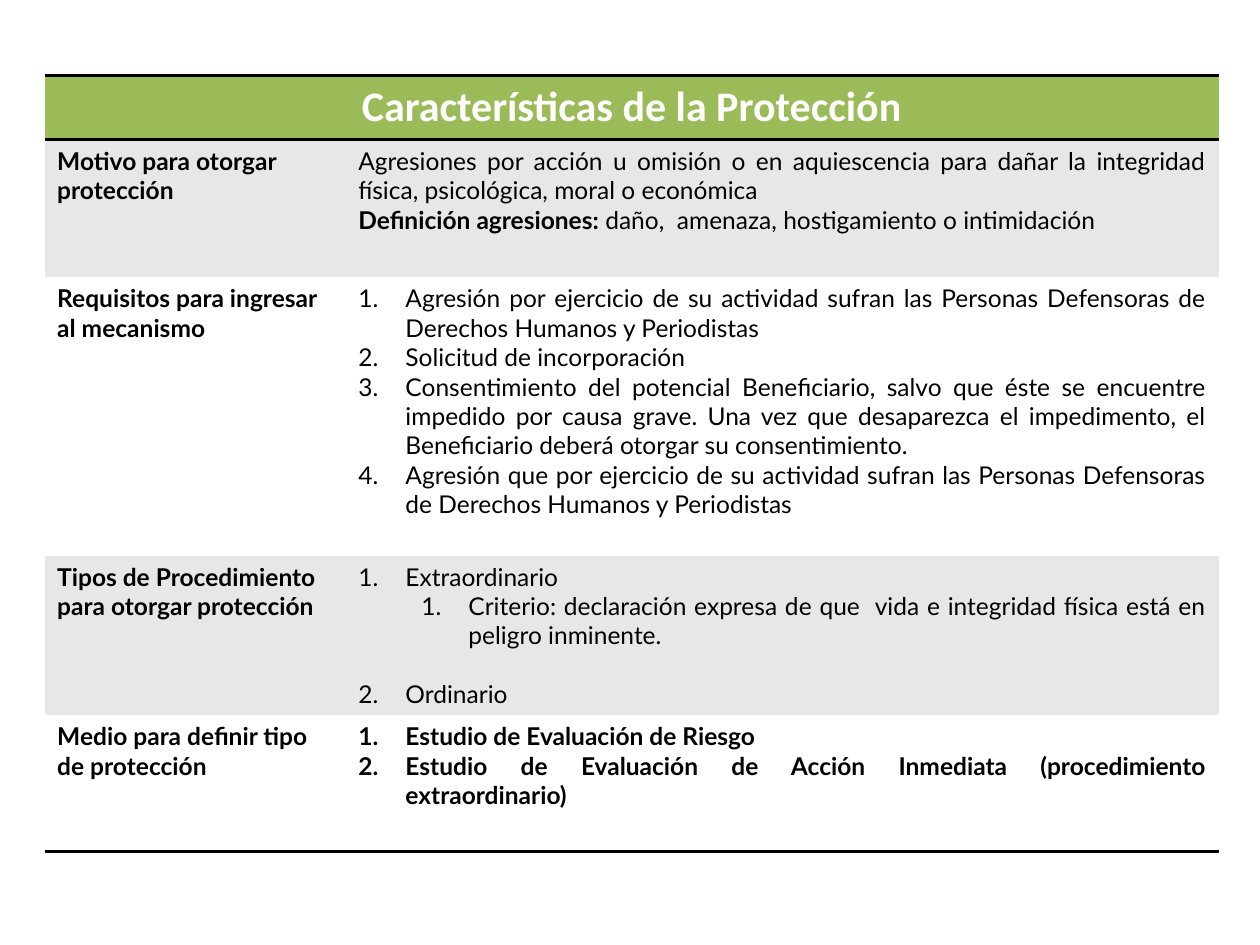
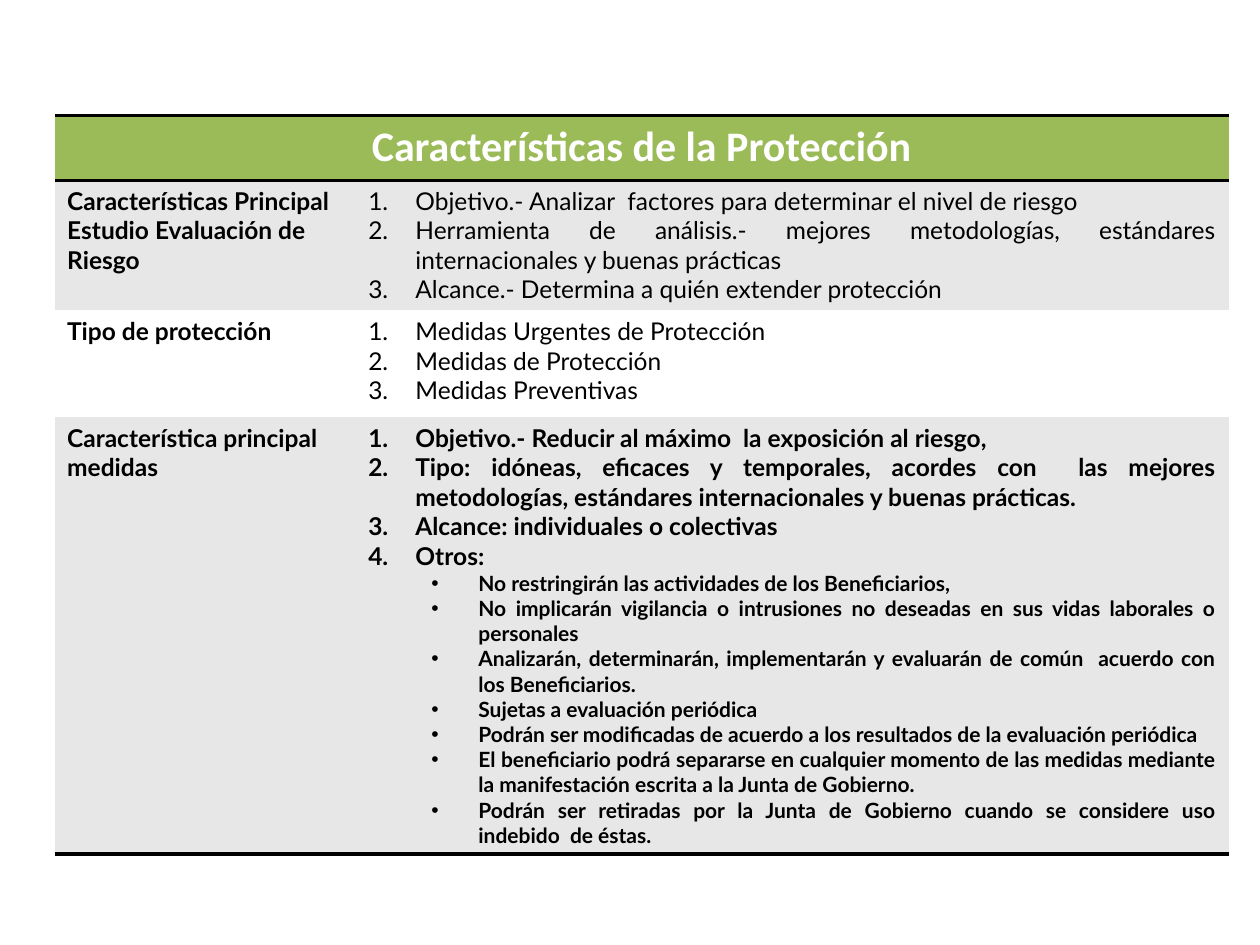
"""Builds two slides of tables on the features of protection."""
from lxml.etree import SubElement
from pptx import Presentation
from pptx.dml.color import RGBColor
from pptx.enum.text import PP_ALIGN
from pptx.oxml.ns import qn
from pptx.util import Cm, Pt

COLORS = {"header": "9BBB59", "band": "E7E7E7", "plain": "FFFFFF",
          "rule": "000000", "text": "000000", "title": "FFFFFF"}
TITLE = "Características de la Protección"
TITLE_FONT, BODY_FONT = "Calibri", "Lato"
NO_GRID_STYLE = "{2D5ABB26-0587-4C30-8999-92F81FD0307C}"
COLUMNS = (6.07, 17.6)
HEADER_HEIGHT = 1.3
HANGING = 0.95
LEVEL_INDENT = 1.27


def numbered(*texts, **fmt):
    """Return numbered lines that share one format."""
    return [dict(text=text, marker="number", **fmt) for text in texts]


def bulleted(*texts, **fmt):
    """Return second-level bulleted lines that share one format."""
    return [dict(text=text, marker="bullet", level=1, **fmt) for text in texts]


GRANTING_ROWS = [
    ("Motivo para otorgar protección", 2.77, [
        dict(text="Agresiones por acción u omisión o en aquiescencia para dañar "
                  "la integridad física, psicológica, moral o económica"),
        dict(lead="Definición agresiones: ",
             text="daño,  amenaza, hostigamiento o intimidación")]),
    ("Requisitos para ingresar al mecanismo", 5.61, numbered(
        "Agresión por ejercicio de su actividad sufran las Personas Defensoras "
        "de Derechos Humanos y Periodistas",
        "Solicitud de incorporación",
        "Consentimiento del potencial Beneficiario, salvo que éste se encuentre "
        "impedido por causa grave. Una vez que desaparezca el impedimento, el "
        "Beneficiario deberá otorgar su consentimiento.",
        "Agresión que por ejercicio de su actividad sufran las Personas "
        "Defensoras de Derechos Humanos y Periodistas")),
    ("Tipos de Procedimiento para otorgar protección", 3.22, [
        *numbered("Extraordinario"),
        *numbered("Criterio: declaración expresa de que  vida e integridad "
                  "física está en peligro inminente.", level=1),
        *numbered("Ordinario", before=16.8)]),
    ("Medio para definir tipo de protección", 2.74, numbered(
        "Estudio de Evaluación de Riesgo",
        "Estudio de Evaluación de Acción Inmediata (procedimiento extraordinario)",
        bold=True)),
]

MEASURES_ROWS = [
    ("Características Principal Estudio Evaluación de Riesgo", 2.6, numbered(
        "Objetivo.- Analizar  factores para determinar el nivel de riesgo",
        "Herramienta de análisis.- mejores metodologías, estándares "
        "internacionales y buenas prácticas",
        "Alcance.- Determina a quién extender protección")),
    ("Tipo de protección", 2.15, numbered(
        "Medidas Urgentes de Protección",
        "Medidas de Protección",
        "Medidas Preventivas")),
    ("Característica principal medidas", 8.78, [
        *numbered(
            "Objetivo.- Reducir al máximo  la exposición al riesgo,",
            "Tipo: idóneas, eficaces y temporales, acordes con  las mejores "
            "metodologías, estándares internacionales y buenas prácticas.",
            "Alcance: individuales o colectivas",
            "Otros:", bold=True),
        *bulleted(
            "No restringirán las actividades de los Beneficiarios,",
            "No implicarán vigilancia o intrusiones no deseadas en sus vidas "
            "laborales o personales",
            "Analizarán, determinarán, implementarán y evaluarán de común  "
            "acuerdo con los Beneficiarios.",
            "Sujetas a evaluación periódica",
            "Podrán ser modificadas de acuerdo a los resultados de la "
            "evaluación periódica",
            "El beneficiario podrá separarse en cualquier momento de las medidas "
            "mediante la manifestación escrita a la Junta de Gobierno.",
            "Podrán ser retiradas por la Junta de Gobierno cuando se considere "
            "uso indebido  de éstas.", bold=True, size=12)]),
]


def set_marker(p, marker, level):
    """Give a paragraph a hanging number or bullet."""
    pPr = p._p.get_or_add_pPr()
    pPr.set("marL", str(Cm(HANGING + LEVEL_INDENT * level)))
    pPr.set("indent", str(-Cm(HANGING)))
    SubElement(pPr, qn("a:buFont"), typeface="Arial" if marker == "bullet" else "+mj-lt")
    if marker == "bullet":
        SubElement(pPr, qn("a:buChar"), char="•")
    else:
        SubElement(pPr, qn("a:buAutoNum"), type="arabicPeriod")


def write(p, text, lead="", size=14, font=BODY_FONT, color="text", bold=False,
          align=PP_ALIGN.JUSTIFY, marker=None, level=0, before=0):
    """Write one formatted paragraph, with an optional bold lead."""
    p.alignment = align
    p.level = level
    if marker:
        set_marker(p, marker, level)
    if before:
        p.space_before = Pt(before)
    for part, is_bold in ((lead, True), (text, bold)):
        if part:
            r = p.add_run()
            r.text = part
            r.font.size = Pt(size)
            r.font.name = font
            r.font.bold = is_bold
            r.font.color.rgb = RGBColor.from_string(COLORS[color])


def style_cell(cell, fill, rules=()):
    """Fill a cell and draw its horizontal rules."""
    tcPr = cell._tc.get_or_add_tcPr()
    for side in rules:
        ln = SubElement(tcPr, qn(f"a:ln{side}"), w=str(Pt(2)))
        solid = SubElement(ln, qn("a:solidFill"))
        SubElement(solid, qn("a:srgbClr"), val=COLORS["rule"])
    cell.fill.solid()
    cell.fill.fore_color.rgb = RGBColor.from_string(COLORS[fill])


def add_header(table):
    """Write the merged title row."""
    for cell in table.rows[0].cells:
        style_cell(cell, "header", "TB")
    table.cell(0, 0).merge(table.cell(0, 1))
    write(table.cell(0, 0).text_frame.paragraphs[0], TITLE, size=24,
          font=TITLE_FONT, color="title", bold=True, align=PP_ALIGN.CENTER)


def add_features_slide(prs, left, top, rows):
    """Add a slide with a table of features at the given corner."""
    s = prs.slides.add_slide(prs.slide_layouts[6])
    heights = [HEADER_HEIGHT] + [height for _, height, _ in rows]
    table = s.shapes.add_table(len(heights), len(COLUMNS), Cm(left), Cm(top),
                               Cm(sum(COLUMNS)), Cm(sum(heights))).table
    table._tbl.tblPr.find(qn("a:tableStyleId")).text = NO_GRID_STYLE
    table.horz_banding = False
    for column, width in zip(table.columns, COLUMNS):
        column.width = Cm(width)
    for row, height in zip(table.rows, heights):
        row.height = Cm(height)
    add_header(table)
    for i, (label, _, lines) in enumerate(rows, 1):
        label_cell, detail_cell = table.rows[i].cells
        for cell in (label_cell, detail_cell):
            style_cell(cell, "band" if i % 2 else "plain", "B" if i == len(rows) else "")
        write(label_cell.text_frame.paragraphs[0], label, bold=True, align=PP_ALIGN.LEFT)
        tf = detail_cell.text_frame
        for j, line in enumerate(lines):
            write(tf.add_paragraph() if j else tf.paragraphs[0], **line)


def main():
    """Build and save the presentation."""
    prs = Presentation()
    prs.slide_width, prs.slide_height = Cm(25.4), Cm(19.05)
    add_features_slide(prs, 0.9, 1.52, GRANTING_ROWS)
    add_features_slide(prs, 1.1, 2.33, MEASURES_ROWS)
    prs.save("out.pptx")


if __name__ == "__main__":
    main()
